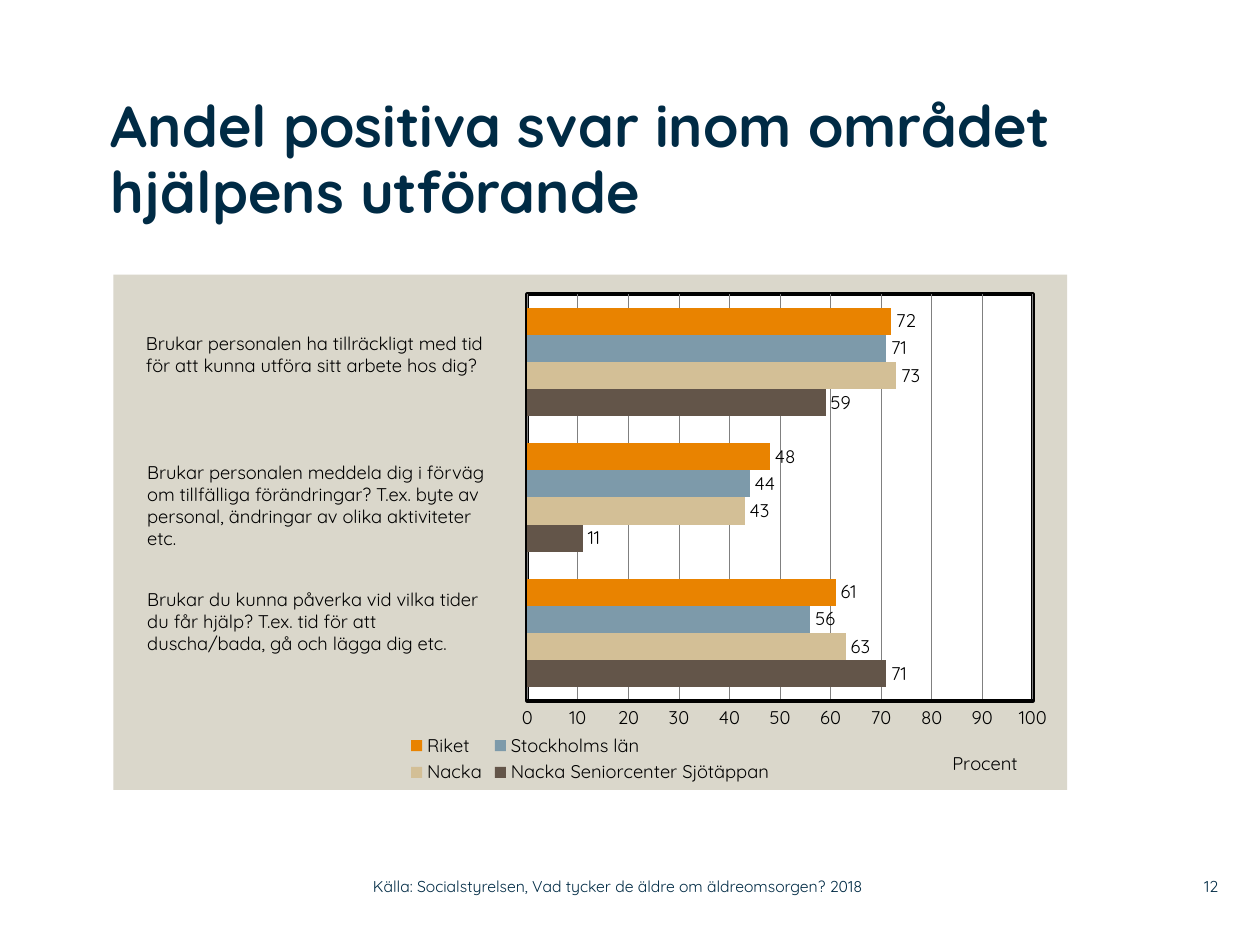
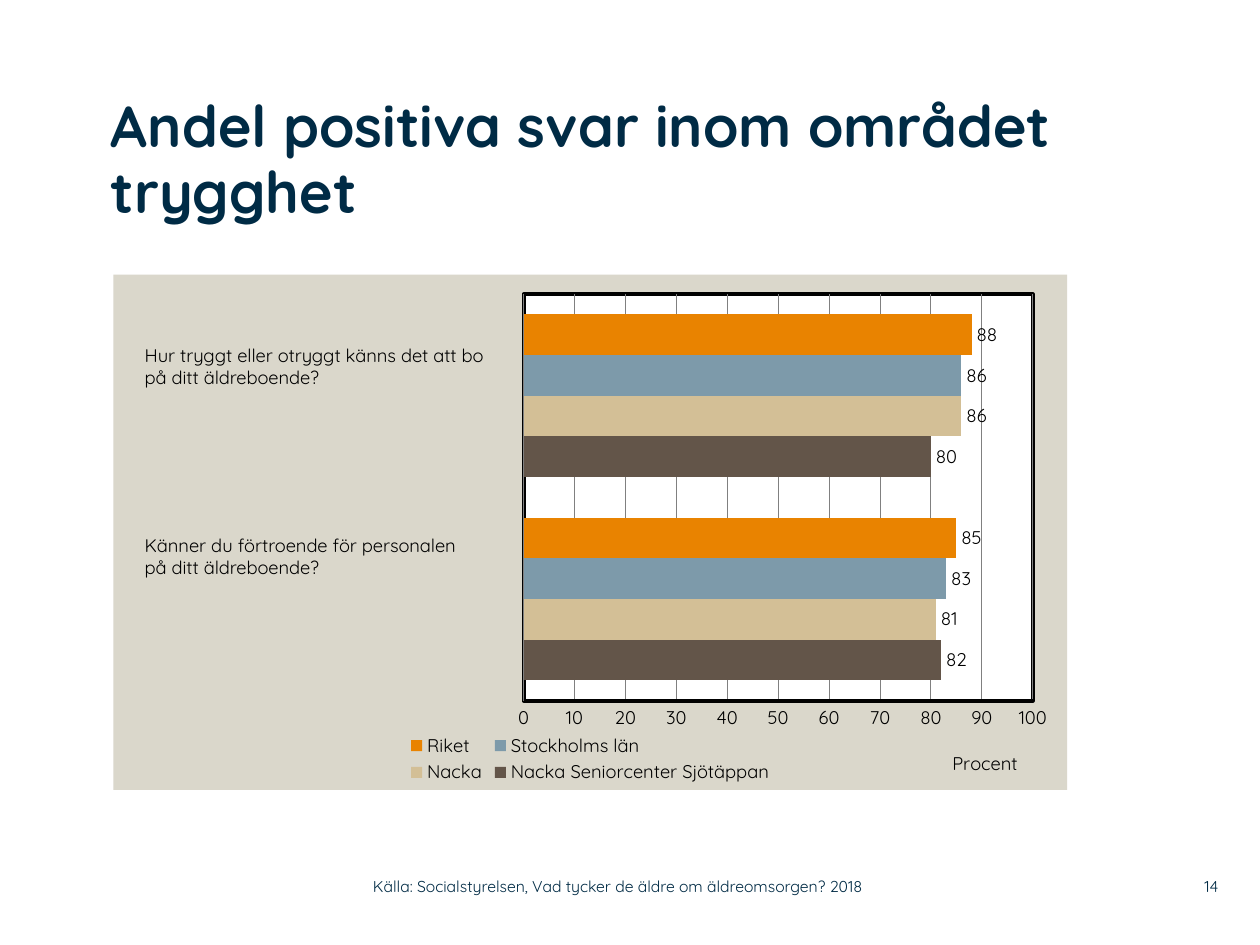
from dataclasses import dataclass

from lxml import etree
from pptx import Presentation, util as u
from pptx.chart import data as cd
from pptx.dml.color import RGBColor
from pptx.enum import chart as ch, text as t
from pptx.oxml import parse_xml
from pptx.oxml.ns import nsdecls, qn

# The slide is a grid of 100 columns by 75 rows.
COLS, ROWS = 100, 75
FONT = "Quicksand"
NAVY = RGBColor(0x00, 0x2B, 0x45)
BLACK = RGBColor(0x00, 0x00, 0x00)
WHITE = RGBColor(0xFF, 0xFF, 0xFF)
GREY = RGBColor(0x80, 0x80, 0x80)
PANEL = RGBColor(0xDA, 0xD7, 0xCB)
SERIES = {
    "Nacka Seniorcenter Sjötäppan": RGBColor(0x63, 0x55, 0x49),
    "Nacka": RGBColor(0xD3, 0xBF, 0x96),
    "Stockholms län": RGBColor(0x7D, 0x9A, 0xAA),
    "Riket": RGBColor(0xE9, 0x83, 0x00),
}
TITLE_STYLE = dict(name=FONT, size=u.Pt(33), bold=True)
CHART_STYLE = dict(name=FONT, size=u.Pt(10.5), bold=False)
FOOTER_STYLE = dict(name=FONT, size=u.Pt(9))
FLAT = dict(margin_left=0, margin_top=0, margin_right=0, margin_bottom=0)
SOURCE = "Källa: Socialstyrelsen, Vad tycker de äldre om äldreomsorgen? 2018"


@dataclass(frozen=True)
class Box:
    col: float
    row: float
    cols: float
    rows: float


@dataclass(frozen=True)
class Question:
    box: Box
    lines: tuple[str, ...]


@dataclass(frozen=True)
class Survey:
    title: str
    number: str
    plot_left: float
    questions: tuple[Question, ...]
    values: tuple[tuple[int, ...], ...]  # one row per series, bottom category first


TITLE_BOX = Box(8.8, 7.5, 76, 14.2)
CHART_BOX = Box(9, 21.8, 75.7, 40.9)
SOURCE_BOX = Box(29.6, 68.9, 44.3, 2.9)
NUMBER_BOX = Box(92, 68.9, 4.7, 2.9)

SURVEYS = (
    Survey(
        "Andel positiva svar inom området hjälpens utförande", "12", 0.434,
        (
            Question(Box(10.6, 25.9, 29.9, 4.5),
                     ("Brukar personalen ha tillräckligt med tid",
                      "för att kunna utföra sitt arbete hos dig?")),
            Question(Box(10.7, 36.1, 29.7, 8.1),
                     ("Brukar personalen meddela dig i förväg om tillfälliga "
                      "förändringar? T.ex. byte av personal, ändringar av "
                      "olika aktiviteter etc.",)),
            Question(Box(10.7, 46.2, 29.7, 6.3),
                     ("Brukar du kunna påverka vid vilka tider",
                      "du får hjälp? T.ex. tid för att",
                      "duscha/bada, gå och lägga dig etc.")),
        ),
        ((71, 11, 59), (63, 43, 73), (56, 44, 71), (61, 48, 72)),
    ),
    Survey(
        "Andel positiva svar inom området trygghet", "14", 0.43,
        (
            Question(Box(10.5, 26.8, 29.4, 4.5),
                     ("Hur tryggt eller otryggt känns det att bo "
                      "på ditt äldreboende?",)),
            Question(Box(10.5, 41.9, 29.3, 4.5),
                     ("Känner du förtroende för personalen",
                      "på ditt äldreboende?")),
        ),
        ((82, 80), (81, 86), (83, 86), (85, 88)),
    ),
)


def place(prs, box: Box) -> tuple[int, int, int, int]:
    """Turn grid units into left, top, width and height."""
    w, h = prs.slide_width / COLS, prs.slide_height / ROWS
    return (round(box.col * w), round(box.row * h),
            round(box.cols * w), round(box.rows * h))


def apply(obj, values: dict) -> None:
    for name, value in values.items():
        setattr(obj, name, value)


def style_font(font, style: dict, color: RGBColor) -> None:
    apply(font, style)
    font.color.rgb = color


def add_text(prs, s, box: Box, lines: tuple[str, ...], style: dict,
             color: RGBColor, frame: dict, align=t.PP_ALIGN.LEFT) -> None:
    tf = s.shapes.add_textbox(*place(prs, box)).text_frame
    apply(tf, dict(word_wrap=True, **frame))
    for i, line in enumerate(lines):
        p = tf.add_paragraph() if i else tf.paragraphs[0]
        p.alignment = align
        r = p.add_run()
        r.text = line
        style_font(r.font, style, color)


def set_layout(parent, index: int, target: str = "", **shares: float) -> None:
    """Fix a chart part's place, as shares of the chart's size."""
    for old in parent.findall(qn("c:layout")):
        parent.remove(old)
    layout = etree.Element(qn("c:layout"))
    manual = etree.SubElement(layout, qn("c:manualLayout"))
    settings = {"layoutTarget": target} if target else {}
    settings |= {"xMode": "edge", "yMode": "edge", **shares}
    for name, value in settings.items():
        etree.SubElement(manual, qn(f"c:{name}")).set("val", str(value))
    parent.insert(index, layout)


def area_format(fill: RGBColor, line: str):
    return parse_xml(
        f'<c:spPr {nsdecls("c", "a")}><a:solidFill><a:srgbClr val="{fill}"/>'
        f'</a:solidFill>{line}</c:spPr>')


def add_bars(prs, s, survey: Survey) -> None:
    data = cd.CategoryChartData()
    data.categories = [str(i + 1) for i in range(len(survey.questions))]
    for name, values in zip(SERIES, survey.values):
        data.add_series(name, values)
    chart = s.shapes.add_chart(ch.XL_CHART_TYPE.BAR_CLUSTERED,
                               *place(prs, CHART_BOX), data).chart
    style_font(chart.font, CHART_STYLE, BLACK)
    chart.has_title = False

    plot = chart.plots[0]
    apply(plot, dict(gap_width=100, overlap=0, vary_by_categories=False,
                     has_data_labels=True))
    apply(plot.data_labels, dict(show_value=True,
                                 position=ch.XL_LABEL_POSITION.OUTSIDE_END))
    style_font(plot.data_labels.font, CHART_STYLE, BLACK)
    for series, color in zip(plot.series, SERIES.values()):
        series.format.fill.solid()
        series.format.fill.fore_color.rgb = color

    chart.category_axis.visible = False
    axis = chart.value_axis
    apply(axis, dict(minimum_scale=0, maximum_scale=100, major_unit=10,
                     has_major_gridlines=True, has_title=True,
                     major_tick_mark=ch.XL_TICK_MARK.NONE))
    for line, color, width in (
            (axis.format.line, BLACK, 2),
            (axis.major_gridlines.format.line, GREY, 0.5)):
        line.color.rgb = color
        line.width = u.Pt(width)
    title = axis.axis_title
    title.text_frame.text = "Procent"
    style_font(title.text_frame.paragraphs[0].runs[0].font, CHART_STYLE, BLACK)
    set_layout(title._element, 1, x=0.876, y=0.915)

    chart.has_legend = True
    apply(chart.legend, dict(position=ch.XL_LEGEND_POSITION.BOTTOM,
                             include_in_layout=False))
    style_font(chart.legend.font, CHART_STYLE, BLACK)
    set_layout(chart.legend._element, 1, x=0.305, y=0.885, w=0.39, h=0.11)

    root = chart._chartSpace
    area = root.chart.plotArea
    set_layout(area, 0, "inner", x=survey.plot_left, y=0.038,
               w=round(0.964 - survey.plot_left, 3), h=0.789)
    area.append(area_format(
        WHITE, f'<a:ln w="{u.Pt(2.25)}"><a:solidFill>'
               f'<a:srgbClr val="{BLACK}"/></a:solidFill></a:ln>'))
    root.chart.addnext(area_format(PANEL, "<a:ln><a:noFill/></a:ln>"))


def add_title(prs, s, words: str) -> None:
    sp = s.shapes.title
    sp.left, sp.top, sp.width, sp.height = place(prs, TITLE_BOX)
    tf = sp.text_frame
    apply(tf, dict(word_wrap=True, vertical_anchor=t.MSO_ANCHOR.TOP,
                   auto_size=t.MSO_AUTO_SIZE.NONE, **FLAT))
    p = tf.paragraphs[0]
    apply(p, dict(alignment=t.PP_ALIGN.LEFT, line_spacing=0.95))
    r = p.add_run()
    r.text = words
    style_font(r.font, TITLE_STYLE, NAVY)


def add_survey(prs, survey: Survey) -> None:
    s = prs.slides.add_slide(prs.slide_layouts[5])
    add_bars(prs, s, survey)
    add_title(prs, s, survey.title)
    for question in survey.questions:
        add_text(prs, s, question.box, question.lines, CHART_STYLE, BLACK,
                 dict(auto_size=t.MSO_AUTO_SIZE.SHAPE_TO_FIT_TEXT))
    footer = dict(vertical_anchor=t.MSO_ANCHOR.MIDDLE, **FLAT)
    for box, words, align in (
            (NUMBER_BOX, survey.number, t.PP_ALIGN.RIGHT),
            (SOURCE_BOX, SOURCE, t.PP_ALIGN.LEFT)):
        add_text(prs, s, box, (words,), FOOTER_STYLE, NAVY, footer, align)


def main() -> None:
    prs = Presentation()
    prs.slide_width, prs.slide_height = u.Inches(10), u.Inches(7.5)
    for survey in SURVEYS:
        add_survey(prs, survey)
    prs.save("out.pptx")


if __name__ == "__main__":
    main()
